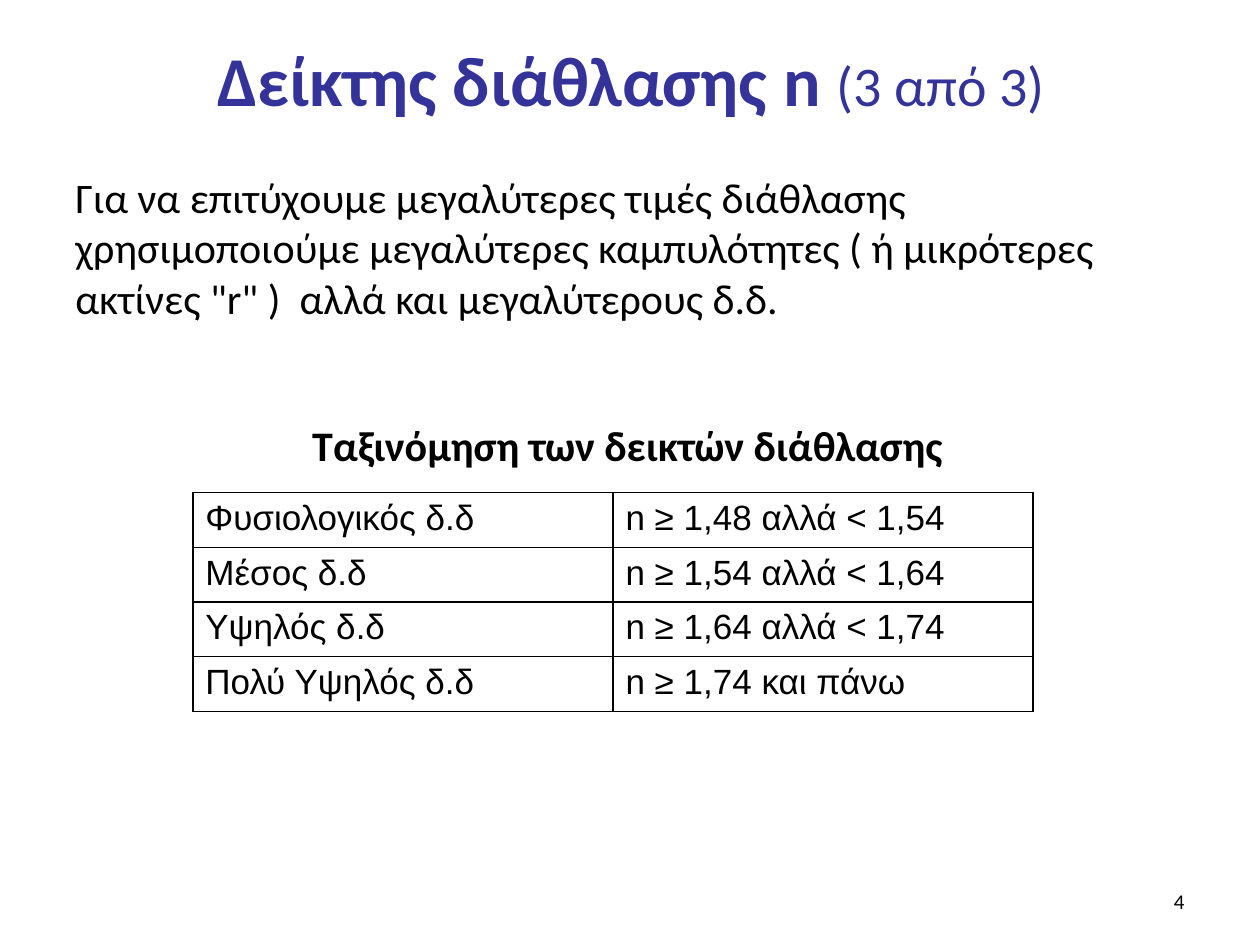
from pptx import Presentation
from pptx.dml.color import RGBColor
from pptx.enum.text import MSO_ANCHOR, PP_ALIGN
from pptx.oxml import parse_xml
from pptx.oxml.ns import nsdecls
from pptx.util import Inches, Pt

BLACK = RGBColor(0, 0, 0)
INDIGO = RGBColor(0x33, 0x33, 0x99)
COLS, ROWS = 100, 75

CLASSES = [
    ("Φυσιολογικός δ.δ", "n ≥ 1,48 αλλά ˂ 1,54"),
    ("Μέσος δ.δ", "n ≥ 1,54 αλλά ˂ 1,64"),
    ("Υψηλός δ.δ", "n ≥ 1,64 αλλά ˂ 1,74"),
    ("Πολύ Υψηλός δ.δ", "n ≥ 1,74 και πάνω"),
]


class Deck:
    font = "Calibri"
    cell_font = "Arial"

    def __init__(self):
        self.prs = Presentation()
        self.prs.slide_width, self.prs.slide_height = Inches(10), Inches(7.5)
        self.slide = self.prs.slides.add_slide(self.prs.slide_layouts[6])

    def place(self, left, top, width, height):
        """Turn grid columns and rows into lengths."""
        x = self.prs.slide_width / COLS
        y = self.prs.slide_height / ROWS
        return int(left * x), int(top * y), int(width * x), int(height * y)

    def run(self, para, text, size, bold=False, color=BLACK, font=font):
        run = para.add_run()
        run.text = text
        run.font.name, run.font.size = font, Pt(size)
        run.font.bold, run.font.color.rgb = bold, color

    def text(self, area, runs, align=PP_ALIGN.LEFT, anchor=MSO_ANCHOR.TOP,
             color=BLACK, wrap=True):
        """Add a one-paragraph box; runs are (text, size, bold)."""
        frame = self.slide.shapes.add_textbox(*self.place(*area)).text_frame
        frame.word_wrap, frame.vertical_anchor = wrap, anchor
        para = frame.paragraphs[0]
        para.alignment = align
        for words, size, bold in runs:
            self.run(para, words, size, bold, color)

    def border(self, cell):
        props = cell._tc.get_or_add_tcPr()
        for spot, side in enumerate(("lnL", "lnR", "lnT", "lnB")):
            props.insert(spot, parse_xml(
                f'<a:{side} {nsdecls("a")} w="{Pt(1)}"><a:solidFill>'
                f'<a:srgbClr val="{BLACK}"/></a:solidFill></a:{side}>'))

    def table(self, area, data, size):
        shape = self.slide.shapes.add_table(
            len(data), len(data[0]), *self.place(*area))
        grid = shape.table
        grid.first_row = grid.horz_banding = False
        for r, line in enumerate(data):
            for c, words in enumerate(line):
                cell = grid.cell(r, c)
                cell.fill.background()
                self.border(cell)
                self.run(cell.text_frame.paragraphs[0], words, size,
                         font=self.cell_font)


def main():
    deck = Deck()
    deck.text((5.1, 1.3, 90, 9.9),
              [("Δείκτης διάθλασης n ", 40, True), ("(3 από 3)", 32, False)],
              PP_ALIGN.CENTER, MSO_ANCHOR.MIDDLE, INDIGO)
    deck.text((5, 13.1, 90, 15.7), [(
        "Για να επιτύχουμε μεγαλύτερες τιµές διάθλασης χρησιμοποιούµε "
        "μεγαλύτερες καμπυλότητες ( ή μικρότερες ακτίνες \"r\" )  αλλά και "
        "μεγαλύτερους δ.δ.", 24, False)])
    deck.text((23.8, 32.8, 52.4, 5),
              [("Ταξινόμηση των δεικτών διάθλασης", 24, True)], wrap=False)
    deck.table((15.3, 39.1, 66.7, 17.3), CLASSES, 20)
    deck.text((71.7, 69.5, 23.3, 4), [("4", 12, False)],
              PP_ALIGN.RIGHT, MSO_ANCHOR.MIDDLE)
    deck.prs.save("out.pptx")


if __name__ == "__main__":
    main()
